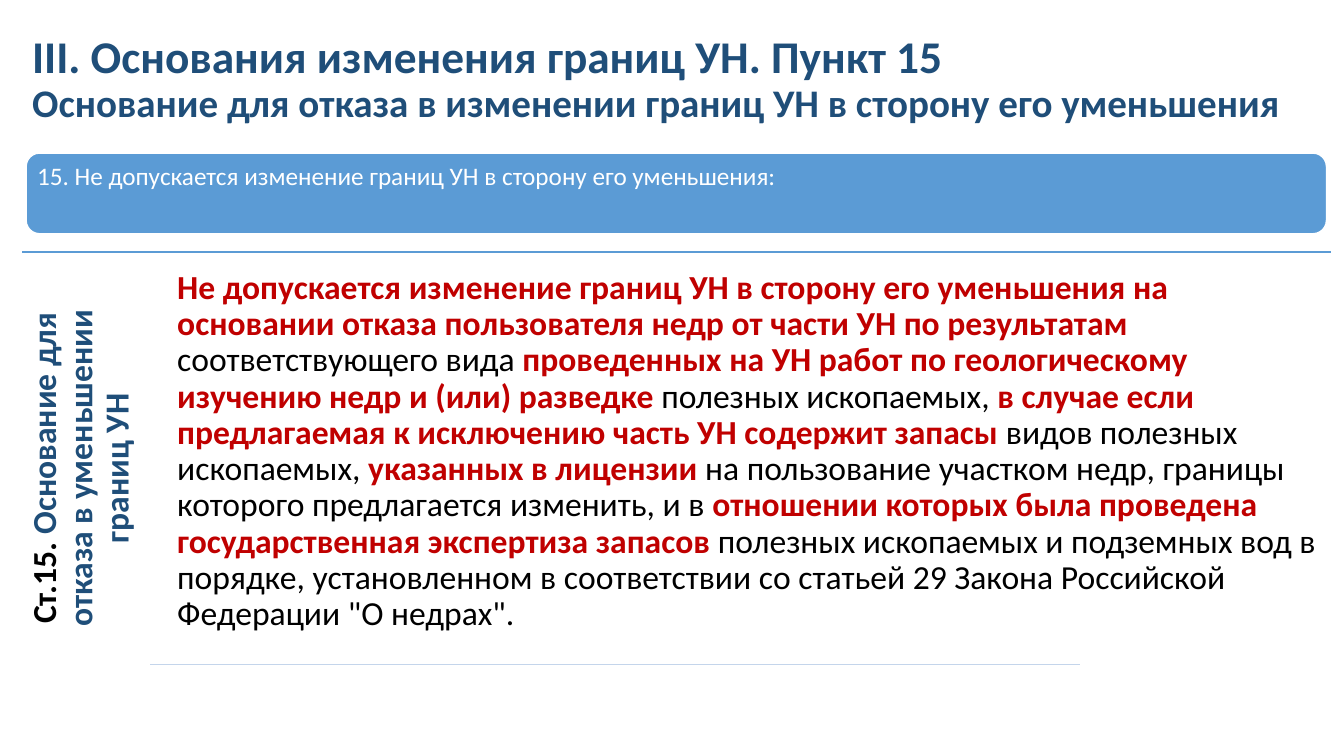
from lxml import etree
from pptx import Presentation
from pptx.dml.color import RGBColor
from pptx.enum.shapes import MSO_CONNECTOR as CONN, MSO_SHAPE as SHAPE
from pptx.enum.text import MSO_ANCHOR as ANCHOR, MSO_AUTO_SIZE as AUTO, PP_ALIGN as ALIGN
from pptx.oxml.ns import qn
from pptx.util import Pt

NAVY = RGBColor(0x1F, 0x4E, 0x79)
BLUE = RGBColor(0x5B, 0x9B, 0xD5)
PALE = RGBColor(0xC4, 0xD5, 0xEB)
RED = RGBColor(0xC0, 0x00, 0x00)
BLACK = RGBColor(0x00, 0x00, 0x00)
WHITE = RGBColor(0xFF, 0xFF, 0xFF)

TITLE = "III. Основания изменения границ УН. Пункт 15 "
SUBTITLE = "Основание для отказа в изменении границ УН в сторону его уменьшения"
BANNER = "15. Не допускается изменение границ УН в сторону его уменьшения:"
SIDE = [("Ст.15. ", BLACK), ("Основание для отказа в уменьшении границ УН", NAVY)]
# Emphasised and plain passages alternate, starting with an emphasised one
PASSAGES = [
    "Не допускается изменение границ УН в сторону его уменьшения на основании "
    "отказа пользователя недр от части УН по результатам ",
    "соответствующего вида ",
    "проведенных на УН работ по геологическому изучению недр и (или) разведке ",
    "полезных ископаемых, ",
    "в случае если предлагаемая к исключению часть УН содержит запасы",
    " видов полезных ископаемых, ",
    "указанных в лицензии ",
    "на пользование участком недр, границы которого предлагается изменить, и в ",
    "отношении которых была проведена государственная экспертиза запасов",
    " полезных ископаемых и подземных вод в порядке, установленном в соответствии "
    "со статьей 29 Закона Российской Федерации \"О недрах\".",
]


def set_frame(tf, inset, anchor=ANCHOR.TOP, align=ALIGN.LEFT):
    """Format a text frame and return its first paragraph."""
    margins = {f"margin_{side}": Pt(inset) for side in ("left", "top", "right", "bottom")}
    fmt = {"word_wrap": True, "auto_size": AUTO.NONE, "vertical_anchor": anchor, **margins}
    for name, value in fmt.items():
        setattr(tf, name, value)
    p = tf.paragraphs[0]
    p.alignment, p.line_spacing = align, 0.9
    return p


def add_run(p, text, size, color, bold=False):
    r = p.add_run()
    r.text = text
    for name, value in {"name": "Calibri", "size": Pt(size), "bold": bold}.items():
        setattr(r.font, name, value)
    r.font.color.rgb = color


def add_rule(slide, x, y, width, color):
    line = slide.shapes.add_connector(CONN.STRAIGHT, Pt(x), Pt(y), Pt(x + width), Pt(y))
    line.line.color.rgb, line.line.width = color, Pt(1)
    etree.SubElement(line._element.spPr, qn("a:effectLst"))


def add_title(slide, x, y, w, h):
    sp = slide.shapes.title
    for name, value in zip(("left", "top", "width", "height"), (x, y, w, h)):
        setattr(sp, name, Pt(value))
    p = set_frame(sp.text_frame, 7.2, ANCHOR.MIDDLE)
    add_run(p, TITLE, 32.4, NAVY, True)
    p.add_line_break()
    add_run(p, SUBTITLE, 27.9, NAVY, True)


def add_banner(slide, x, y, w, h):
    sp = slide.shapes.add_shape(SHAPE.ROUNDED_RECTANGLE, Pt(x), Pt(y), Pt(w), Pt(h))
    sp.shadow.inherit = False
    sp.fill.solid()
    sp.fill.fore_color.rgb = BLUE
    sp.line.color.rgb, sp.line.width = WHITE, Pt(1)
    add_run(set_frame(sp.text_frame, 5), BANNER, 18, WHITE)


def add_article(slide, x, y, w, h):
    # Rules above and below
    side_w = 91.4
    add_rule(slide, x, y, w, BLUE)
    add_rule(slide, x + side_w, y + 294.5, 664.6, PALE)

    # Heading turned to read upwards
    side = slide.shapes.add_textbox(Pt(x), Pt(y), Pt(side_w), Pt(h))
    p = set_frame(side.text_frame, 7.2, align=ALIGN.CENTER)
    side.text_frame._txBody.bodyPr.set("vert", "vert270")
    for text, color in SIDE:
        add_run(p, text, 24, color, True)

    # Article text
    text_x = x + side_w + 12.3
    body = slide.shapes.add_textbox(Pt(text_x), Pt(y + 5.8), Pt(x + w - text_x), Pt(281))
    p = set_frame(body.text_frame, 7.2)
    for i, text in enumerate(PASSAGES):
        strong = i % 2 == 0
        add_run(p, text, 24, RED if strong else BLACK, strong)


def main():
    prs = Presentation()
    prs.slide_width, prs.slide_height = Pt(960), Pt(540)
    slide = prs.slides.add_slide(prs.slide_layouts[5])
    add_title(slide, 15.8, 5, 909.4, 104.4)
    add_banner(slide, 18.7, 109.4, 928.8, 57.6)
    add_article(slide, 15.8, 180, 935.3, 308.9)
    prs.save("out.pptx")


if __name__ == "__main__":
    main()
